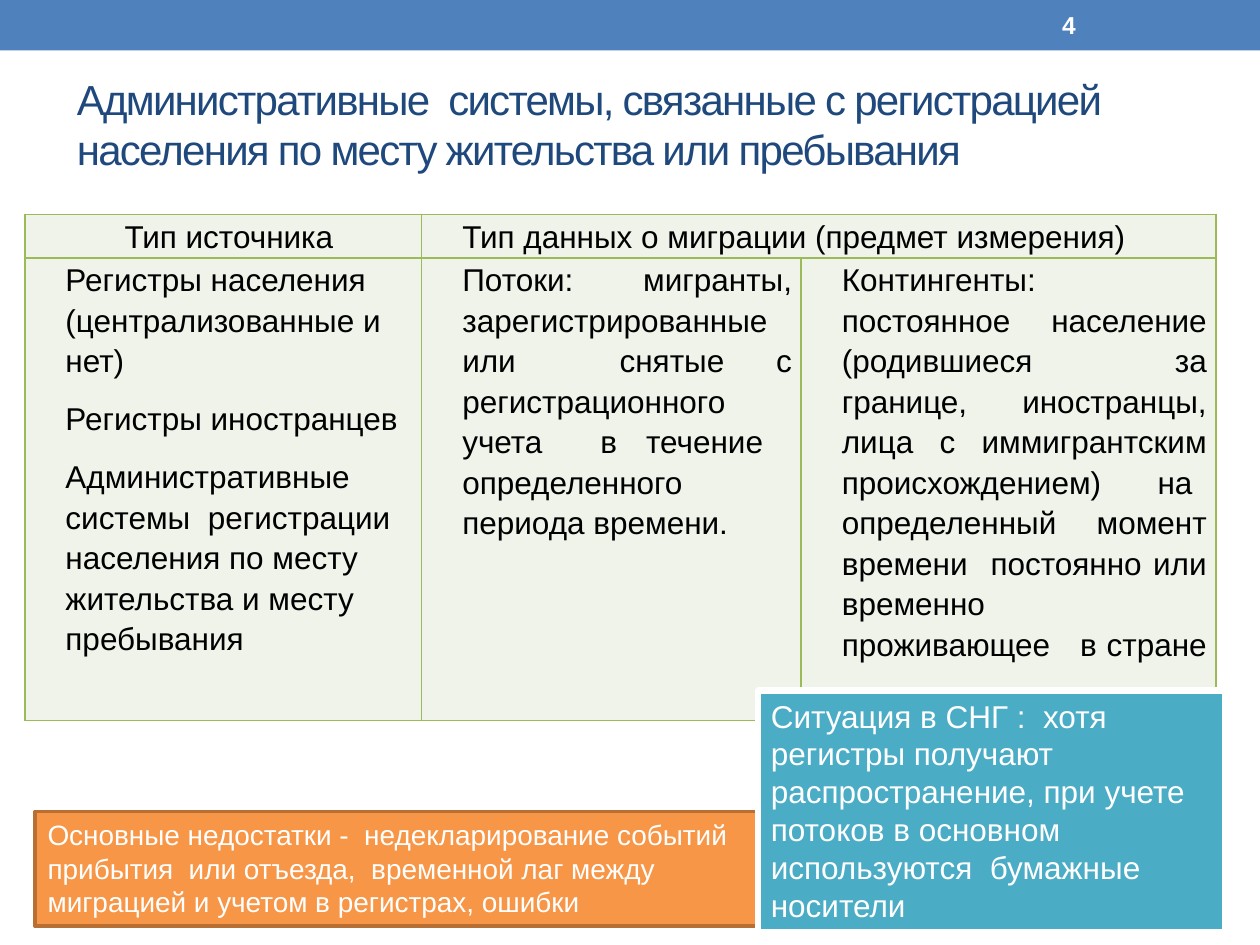
from lxml.etree import SubElement
from pptx import Presentation
from pptx.dml.color import RGBColor
from pptx.enum.shapes import MSO_SHAPE
from pptx.enum.text import MSO_ANCHOR as ANCHOR, PP_ALIGN as ALIGN
from pptx.oxml.ns import qn
from pptx.util import Cm, Pt

FONT = "Arial"
WHITE, BLACK = "FFFFFF", "000000"
BAR_BLUE, TITLE_BLUE = "4F81BD", "1F497D"
CELL_FILL, GRID_GREEN = "EFF3EA", "9BBB59"

TITLE = ("Административные  системы, связанные с регистрацией "
         "населения по месту жительства или пребывания")
PAGE_NUMBER = "4"

TABLE_PLACE = (0.5, 4.32)
COLUMN_WIDTHS = (8.0, 7.65, 8.36)
ROW_HEIGHTS = (0.8, 9.33)
# row, column, indent in cm, alignment, paragraphs
CELLS = [
    (0, 0, 1.83, ALIGN.LEFT, ["Тип источника"]),
    (0, 1, 0.64, ALIGN.LEFT, ["Тип данных о миграции (предмет измерения)"]),
    (1, 0, 0.64, ALIGN.LEFT, [
        "Регистры населения (централизованные и нет)",
        "Регистры иностранцев",
        "Административные системы  регистрации населения по месту "
        "жительства и месту пребывания"]),
    (1, 1, 0.64, ALIGN.JUSTIFY, [
        "Потоки:  мигранты, зарегистрированные или  снятые с "
        "регистрационного учета  в течение  определенного периода времени."]),
    (1, 2, 0.64, ALIGN.JUSTIFY, [
        "Контингенты: постоянное население (родившиеся за границе, "
        "иностранцы, лица с иммигрантским происхождением)    на  "
        "определенный момент времени  постоянно или временно  "
        "проживающее   в стране "]),
]

# place in cm, fill, line colour, line width, text size, text
CALLOUTS = [
    ((0.71, 16.36, 14.6, 2.31), "F79646", "B76F34", 2.08, 16,
     "Основные недостатки -  недекларирование событий прибытия  или "
     "отъезда,  временной лаг между  миграцией и учетом в регистрах, ошибки"),
    ((15.29, 13.92, 9.4, 4.88), "4BACC6", WHITE, 3.5, 18,
     "Ситуация в СНГ :  хотя регистры получают распространение, при учете "
     "потоков в основном используются  бумажные носители"),
]


def rgb(color):
    return RGBColor.from_string(color)


def add_run(paragraph, text, size, color, bold=False):
    run = paragraph.add_run()
    run.text = text
    font = run.font
    font.name, font.size, font.bold = FONT, Pt(size), bold
    font.color.rgb = rgb(color)
    return run


def add_rectangle(slide, place, fill):
    shape = slide.shapes.add_shape(MSO_SHAPE.RECTANGLE, *map(Cm, place))
    shape.shadow.inherit = False
    shape.fill.solid()
    shape.fill.fore_color.rgb = rgb(fill)
    return shape


def add_label(slide, place, text, size, color, bold=False):
    frame = slide.shapes.add_textbox(*map(Cm, place)).text_frame
    frame.word_wrap = True
    frame.vertical_anchor = ANCHOR.MIDDLE
    return add_run(frame.paragraphs[0], text, size, color, bold)


def style_cell(cell):
    """Fill the cell, set its margins and draw its four borders."""
    cell.margin_left = cell.margin_right = Cm(0.18)
    cell.margin_top = cell.margin_bottom = 0
    properties = cell._tc.get_or_add_tcPr()
    for side in ("a:lnL", "a:lnR", "a:lnT", "a:lnB"):
        border = SubElement(properties, qn(side), w=str(Pt(1)))
        SubElement(SubElement(border, qn("a:solidFill")),
                   qn("a:srgbClr"), val=GRID_GREEN)
    cell.fill.solid()
    cell.fill.fore_color.rgb = rgb(CELL_FILL)


def fill_cell(cell, indent, alignment, texts):
    frame = cell.text_frame
    for index, text in enumerate(texts):
        paragraph = frame.add_paragraph() if index else frame.paragraphs[0]
        paragraph.alignment = alignment
        paragraph.line_spacing = 1.15
        paragraph.space_after = Pt(10)
        properties = paragraph._p.get_or_add_pPr()
        properties.set("marL", str(Cm(indent)))
        properties.set("indent", "0")
        add_run(paragraph, text, 18, BLACK)


def add_source_table(slide):
    size = (sum(COLUMN_WIDTHS), sum(ROW_HEIGHTS))
    table = slide.shapes.add_table(len(ROW_HEIGHTS), len(COLUMN_WIDTHS),
                                   *map(Cm, TABLE_PLACE + size)).table
    table.first_row = table.horz_banding = False
    for column, width in zip(table.columns, COLUMN_WIDTHS):
        column.width = Cm(width)
    for row, height in zip(table.rows, ROW_HEIGHTS):
        row.height = Cm(height)
    for cell in table.iter_cells():
        style_cell(cell)
    table.cell(0, 1).merge(table.cell(0, 2))
    for row, column, indent, alignment, texts in CELLS:
        fill_cell(table.cell(row, column), indent, alignment, texts)


def add_callout(slide, place, fill, line, line_width, size, text):
    shape = add_rectangle(slide, place, fill)
    shape.line.color.rgb = rgb(line)
    shape.line.width = Pt(line_width)
    frame = shape.text_frame
    frame.word_wrap = True
    frame.vertical_anchor = ANCHOR.TOP
    paragraph = frame.paragraphs[0]
    paragraph.alignment = ALIGN.LEFT
    add_run(paragraph, text, size, WHITE)


def main():
    presentation = Presentation()
    presentation.slide_width, presentation.slide_height = Cm(25.4), Cm(19.05)
    slide = presentation.slides.add_slide(presentation.slide_layouts[6])

    bar = add_rectangle(slide, (0, 0, 25.4, 1.02), BAR_BLUE)
    bar.line.fill.background()
    title = add_label(slide, (1.3, 1.12, 22.86, 2.74), TITLE, 24, TITLE_BLUE)
    title.font._element.set("spc", "-100")
    add_label(slide, (21.16, 0.05, 2.97, 0.91), PAGE_NUMBER, 14, WHITE, True)
    add_source_table(slide)
    for callout in CALLOUTS:
        add_callout(slide, *callout)

    presentation.save("out.pptx")


if __name__ == "__main__":
    main()
